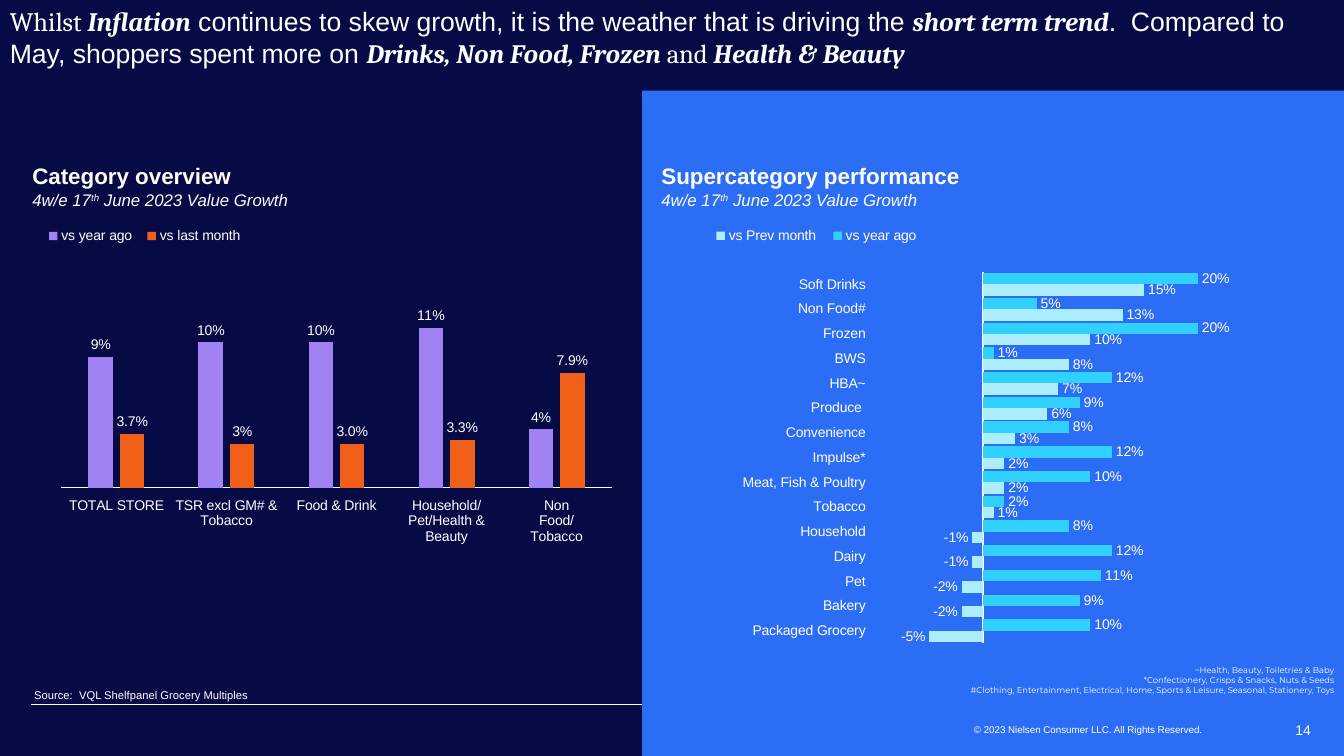
from lxml import etree
from pptx import Presentation
from pptx.chart.data import CategoryChartData
from pptx.dml.color import RGBColor
from pptx.enum.chart import XL_CHART_TYPE as CT, XL_LABEL_POSITION as LP
from pptx.enum.chart import XL_LEGEND_POSITION as LG, XL_TICK_LABEL_POSITION as TL, XL_TICK_MARK as TM
from pptx.enum.shapes import MSO_CONNECTOR, MSO_SHAPE
from pptx.enum.text import MSO_ANCHOR as MA, PP_ALIGN as PA
from pptx.oxml.ns import qn
from pptx.util import Inches, Pt

C = {"navy": "060A45", "blue": "2C6DF6", "white": "FFFFFF", "purple": "A082F3",
     "orange": "EF5F17", "cyan": "30D1FF", "pale": "ACEDFF"}

SERIF, SANS = "Cambria", "Arial"
STRONG = {"font": SERIF, "bold": True, "italic": True}
TITLE = [[
    ("Whilst ", {"font": SERIF}),
    ("Inflation", STRONG),
    (" continues to skew growth, it is the weather that is driving the ", {}),
    ("short term trend", STRONG),
    (".  Compared to May, shoppers spent more on ", {}),
    ("Drinks, Non Food, Frozen ", STRONG),
    ("and ", {"font": SERIF}),
    ("Health & Beauty", STRONG),
]]
HEADINGS = [(0.32, "Category overview"), (6.56, "Supercategory performance")]
PERIOD = [("4w/e 17", {}), ("th", {"sup": True}), (" June 2023 Value Growth", {})]
FOOTNOTES = ["~Health, Beauty, Toiletries & Baby",
             "*Confectionery, Crisps & Snacks, Nuts & Seeds",
             "#Clothing, Entertainment, Electrical, Home, Sports & Leisure, Seasonal, Stationery, Toys"]
SOURCE = "Source:  VQL Shelfpanel Grocery Multiples"
RIGHTS = "© 2023 Nielsen Consumer LLC. All Rights Reserved."
PAGE = "14"

CATEGORY = {
    "kind": CT.COLUMN_CLUSTERED, "box": (0.32, 1.91, 6.03, 4.54),
    "cats": ["TOTAL STORE", "TSR excl GM# & Tobacco", "Food & Drink",
             "Household/Pet/Health & Beauty", "Non Food/Tobacco"],
    "series": [("vs year ago", [0.09, 0.1, 0.1, 0.11, 0.04], "purple", "0%"),
               ("vs last month", [0.037, 0.03, 0.03, 0.033, 0.079], "orange", "0.0%")],
    "gap": 219, "overlap": -27, "scale": (0, 0.15, 0.05), "reverse": False,
    "plot": (0.048, 0.168, 0.905, 0.477), "legend": (0.01, 0.06, 0.35, 0.07),
}
SUPERCATEGORY = {
    "kind": CT.BAR_CLUSTERED, "box": (6.92, 2.19, 6.04, 4.25),
    "cats": ["Soft Drinks", "Non Food#", "Frozen", "BWS", "HBA~", "Produce ", "Convenience",
             "Impulse*", "Meat, Fish & Poultry", "Tobacco", "Household", "Dairy", "Pet",
             "Bakery", "Packaged Grocery"],
    "series": [("vs year ago", [0.2, 0.05, 0.2, 0.01, 0.12, 0.09, 0.08, 0.12, 0.1, 0.02,
                                0.08, 0.12, 0.11, 0.09, 0.1], "cyan", "0%"),
               ("vs Prev month", [0.15, 0.13, 0.1, 0.08, 0.07, 0.06, 0.03, 0.02, 0.02, 0.01,
                                  -0.01, -0.01, -0.02, -0.02, -0.05], "pale", "0%")],
    "gap": 17, "overlap": 0, "scale": (-0.1, 0.3, 0.1), "reverse": True,
    "plot": (0.292, 0.12, 0.706, 0.866), "legend": (0.01, 0.0, 0.37, 0.07),
}


def rgb(name):
    return RGBColor.from_string(C[name])


def style(font, size, name=SANS):
    font.size, font.name = Pt(size), name
    font.color.rgb = rgb("white")


def add_panel(s, box, color):
    sp = s.shapes.add_shape(MSO_SHAPE.RECTANGLE, *map(Inches, box))
    sp.shadow.inherit = False
    sp.fill.solid()
    sp.fill.fore_color.rgb = rgb(color)
    sp.line.fill.background()


def add_text(s, box, paras, size, align=PA.LEFT, anchor=MA.TOP, inset=0.1, wrap=True):
    tf = s.shapes.add_textbox(*map(Inches, box)).text_frame
    tf.word_wrap, tf.vertical_anchor = wrap, anchor
    tf.margin_left = tf.margin_right = Inches(inset)
    for i, runs in enumerate(paras):
        p = tf.add_paragraph() if i else tf.paragraphs[0]
        p.alignment = align
        for text, look in runs:
            r = p.add_run()
            r.text = text
            style(r.font, look.get("size", size), look.get("font", SANS))
            r.font.bold, r.font.italic = look.get("bold", False), look.get("italic", False)
            if look.get("sup"):
                r.font._element.set("baseline", "30000")


def set_layout(parent, box, inner=False):
    for old in parent.findall(qn("c:layout")):
        parent.remove(old)
    layout = etree.Element(qn("c:layout"))
    manual = etree.SubElement(layout, qn("c:manualLayout"))
    pairs = [("layoutTarget", "inner")] if inner else []
    pairs += [("xMode", "edge"), ("yMode", "edge"), *zip("xywh", map(str, box))]
    for tag, val in pairs:
        etree.SubElement(manual, qn("c:" + tag)).set("val", val)
    parent.insert(0 if inner else 1, layout)


def add_growth_chart(s, d):
    data = CategoryChartData(number_format="0.0%")
    data.categories = d["cats"]
    for name, vals, _, _ in d["series"]:
        data.add_series(name, vals)
    chart = s.shapes.add_chart(d["kind"], *map(Inches, d["box"]), data).chart
    chart.has_title = False
    style(chart.font, 10)
    plot = chart.plots[0]
    plot.gap_width, plot.overlap, plot.vary_by_categories = d["gap"], d["overlap"], False
    for ser, (_, _, color, fmt) in zip(plot.series, d["series"]):
        ser.invert_if_negative = False
        ser.format.fill.solid()
        ser.format.fill.fore_color.rgb = rgb(color)
        labels = ser.data_labels
        labels.show_value, labels.position = True, LP.OUTSIDE_END
        labels.number_format, labels.number_format_is_linked = fmt, False
        style(labels.font, 10)
    cat, val = chart.category_axis, chart.value_axis
    cat.tick_label_position = TL.LOW
    cat.major_tick_mark = cat.minor_tick_mark = TM.NONE
    cat.reverse_order = d["reverse"]
    cat.format.line.color.rgb = rgb("white")
    cat.format.line.width = Pt(0.75)
    style(cat.tick_labels.font, 10)
    val.minimum_scale, val.maximum_scale, val.major_unit = d["scale"]
    val.has_major_gridlines = val.visible = False
    chart.has_legend = True
    chart.legend.position, chart.legend.include_in_layout = LG.BOTTOM, False
    style(chart.legend.font, 10)
    set_layout(plot._element.getparent(), d["plot"], inner=True)
    set_layout(chart.legend._element, d["legend"])
    return chart


def main():
    """Build the grocery growth slide."""
    prs = Presentation()
    prs.slide_width, prs.slide_height = Inches(13.33), Inches(7.5)
    s = prs.slides.add_slide(prs.slide_layouts[6])
    s.background.fill.solid()
    s.background.fill.fore_color.rgb = rgb("navy")

    rule = s.shapes.add_connector(MSO_CONNECTOR.STRAIGHT, *map(Inches, (0.31, 6.99, 13.01, 6.99)))
    rule.line.color.rgb = rgb("white")
    rule.line.width = Pt(1)
    etree.SubElement(rule._element.spPr, qn("a:effectLst"))
    add_panel(s, (6.37, 0, 6.96, 7.5), "blue")
    add_panel(s, (0, 0, 13.33, 0.9), "navy")

    add_text(s, (9.66, 7.13, 2.84, 0.22), [[(RIGHTS, {})]], 7, inset=0)
    add_text(s, (12.01, 7.04, 0.99, 0.4), [[(PAGE, {})]], 10, PA.RIGHT, MA.MIDDLE, 0)
    add_text(s, (0.24, 6.78, 5.84, 0.24), [[(SOURCE, {})]], 8)
    notes = [[(line, {"font": "Montserrat"})] for line in FOOTNOTES]
    add_text(s, (9.52, 6.55, 3.81, 0.4), notes, 6, PA.RIGHT, wrap=False)

    category = add_growth_chart(s, CATEGORY)
    label = category.plots[0].series[1].points[1].data_label
    r = label.text_frame.paragraphs[0].add_run()
    r.text = "3%"
    style(r.font, 10)
    label.position = LP.OUTSIDE_END
    add_growth_chart(s, SUPERCATEGORY)

    period = [(text, {**look, "italic": True}) for text, look in PERIOD]
    for left, heading in HEADINGS:
        paras = [[(heading, {"size": 16, "bold": True})], period]
        add_text(s, (left, 1.56, 4.78, 0.57), paras, 12, anchor=MA.MIDDLE, inset=0)
    add_text(s, (0, 0, 13.33, 0.74), TITLE, 19)
    prs.save("out.pptx")


if __name__ == "__main__":
    main()
